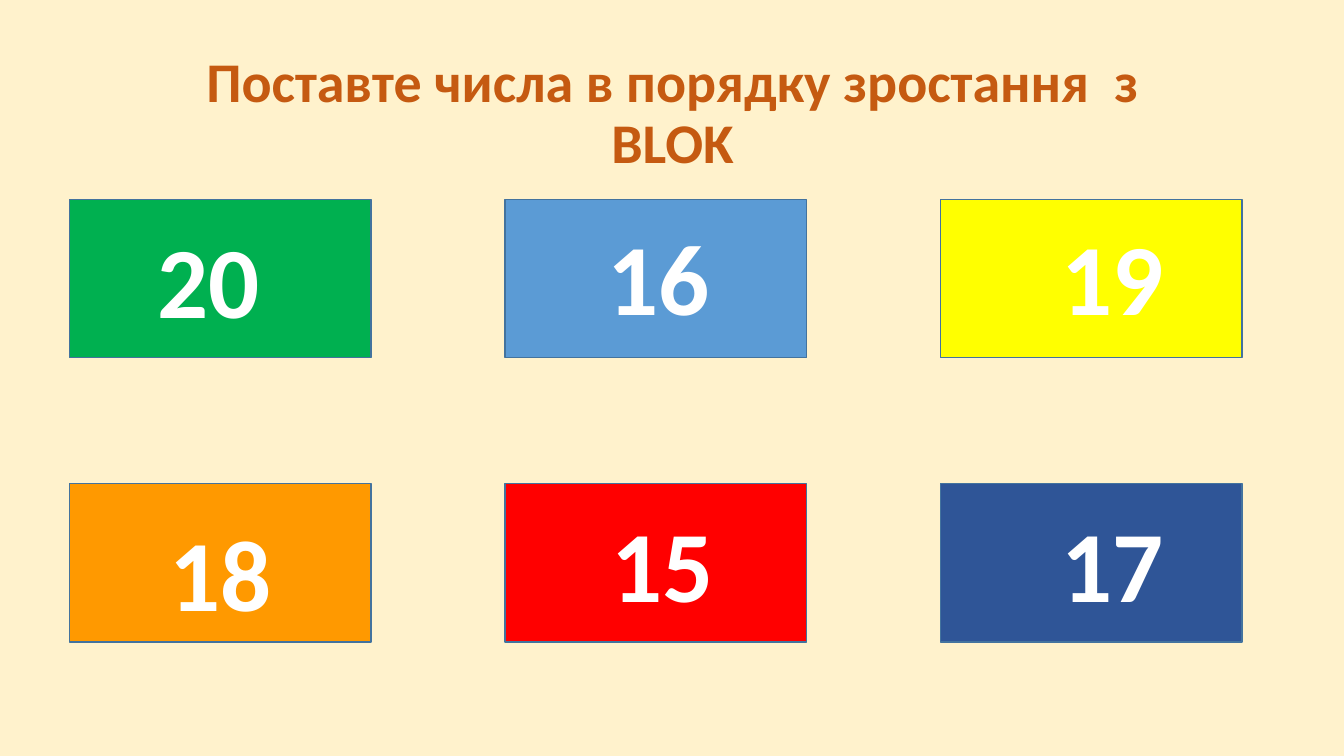
from pptx import Presentation
from pptx import util as u
from pptx.dml.color import RGBColor
from pptx.enum import shapes, text

CREAM = RGBColor(0xFF, 0xF2, 0xCC)
RUST = RGBColor(0xC5, 0x5A, 0x11)
WHITE = RGBColor(0xFF, 0xFF, 0xFF)
OUTLINE = RGBColor(0x43, 0x73, 0x9E)
GREEN = RGBColor(0x00, 0xB0, 0x50)
BLUE = RGBColor(0x5B, 0x9B, 0xD5)
YELLOW = RGBColor(0xFF, 0xFF, 0x00)
ORANGE = RGBColor(0xFF, 0x99, 0x00)
RED = RGBColor(0xFF, 0x00, 0x00)
NAVY = RGBColor(0x2F, 0x55, 0x97)

GRID_LEFT, GRID_TOP = 0.69, 1.98
COL_STEP, ROW_STEP = 4.32, 2.82
BRICK_W, BRICK_H = 2.99, 1.57
LABEL_W, LABEL_H = 1.23, 1.31

# number, colour, label offset inside the brick
BRICKS = [
    [("20", GREEN, 0.77, 0.13), ("16", BLUE, 0.92, 0.1), ("19", YELLOW, 1.1, 0.1)],
    [("18", ORANGE, 0.89, 0.22), ("15", RED, 0.96, 0.13), ("17", NAVY, 1.1, 0.13)],
]


def style_text(tf, size, color):
    for p in tf.paragraphs:
        for r in p.runs:
            r.font.name = "Calibri"
            r.font.size = u.Pt(size)
            r.font.bold = True
            r.font.color.rgb = color


def add_title(s, wording):
    sp = s.shapes.title
    sp.left, sp.top = u.Inches(1.67), u.Inches(0.15)
    sp.width, sp.height = u.Inches(10), u.Inches(1.64)
    tf = sp.text_frame
    tf.text = wording
    tf.word_wrap = True
    tf.auto_size = text.MSO_AUTO_SIZE.NONE
    tf.vertical_anchor = text.MSO_ANCHOR.BOTTOM
    p = tf.paragraphs[0]
    p.alignment = text.PP_ALIGN.CENTER
    p.line_spacing = 0.9
    style_text(tf, 40, RUST)


def add_brick(s, left, top, color):
    sp = s.shapes.add_shape(shapes.MSO_SHAPE.RECTANGLE, u.Inches(left), u.Inches(top),
                            u.Inches(BRICK_W), u.Inches(BRICK_H))
    sp.shadow.inherit = False
    sp.fill.solid()
    sp.fill.fore_color.rgb = color
    sp.line.color.rgb = OUTLINE
    sp.line.width = u.Pt(1)


def add_number(s, left, top, number):
    sp = s.shapes.add_textbox(u.Inches(left), u.Inches(top), u.Inches(LABEL_W), u.Inches(LABEL_H))
    tf = sp.text_frame
    tf.text = number
    tf.word_wrap = False
    tf.auto_size = text.MSO_AUTO_SIZE.SHAPE_TO_FIT_TEXT
    style_text(tf, 72, WHITE)


def main():
    prs = Presentation()
    prs.slide_width, prs.slide_height = u.Inches(13.33), u.Inches(7.5)
    s = prs.slides.add_slide(prs.slide_layouts[0])
    s.background.fill.solid()
    s.background.fill.fore_color.rgb = CREAM
    subtitle = s.placeholders[1].element
    subtitle.getparent().remove(subtitle)

    add_title(s, "Поставте числа в порядку зростання  з BLOK")
    for row, bricks in enumerate(BRICKS):
        for col, (number, color, dx, dy) in enumerate(bricks):
            left = GRID_LEFT + col * COL_STEP
            top = GRID_TOP + row * ROW_STEP
            add_brick(s, left, top, color)
            add_number(s, left + dx, top + dy, number)
    prs.save("out.pptx")


if __name__ == "__main__":
    main()
